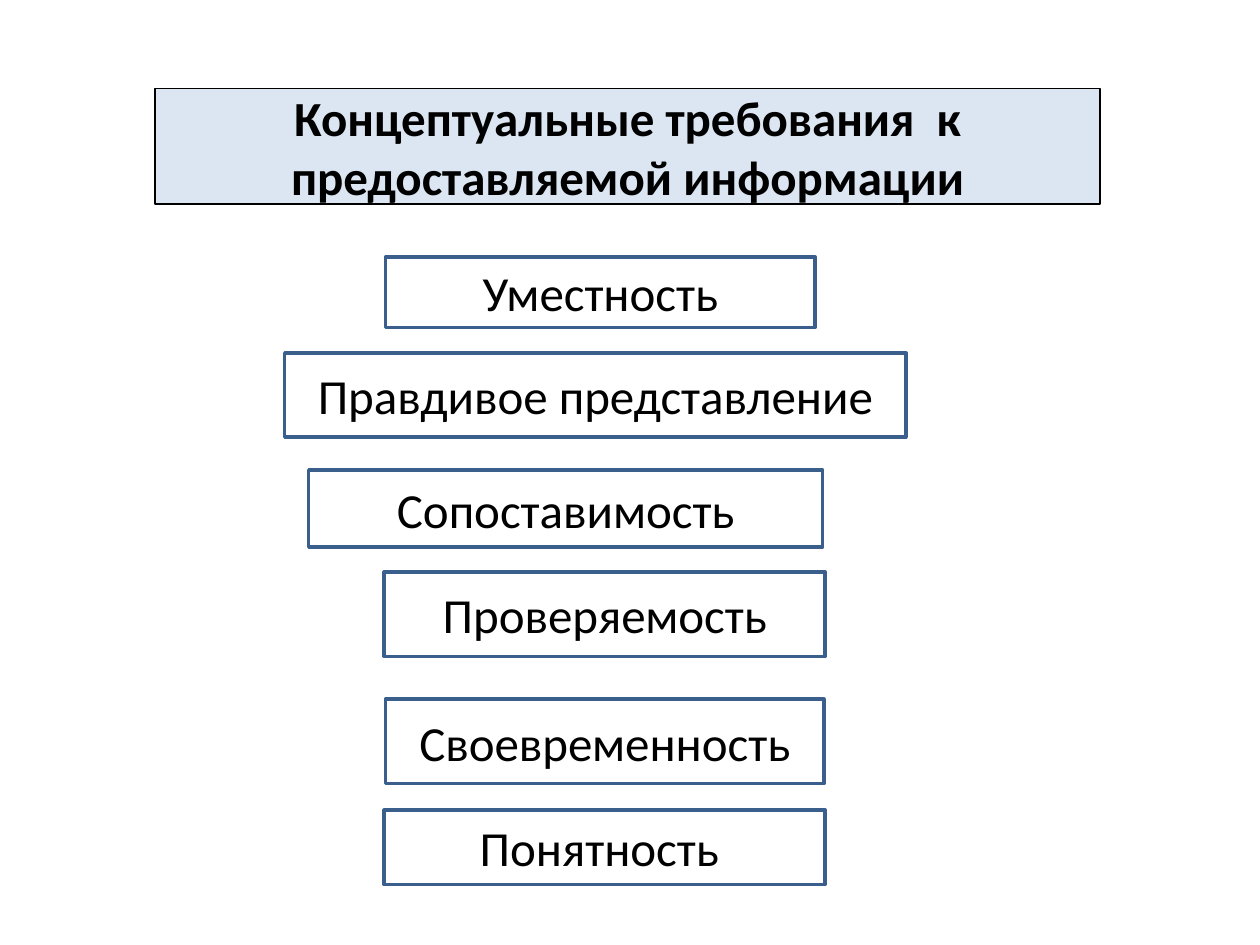
from pptx import Presentation
from pptx.dml.color import RGBColor
from pptx.enum.shapes import MSO_SHAPE as Shape
from pptx.enum.text import MSO_ANCHOR as Anchor, PP_ALIGN as Align
from pptx.util import Inches, Pt

BLACK = RGBColor(0x00, 0x00, 0x00)
WHITE = RGBColor(0xFF, 0xFF, 0xFF)
PALE = RGBColor(0xDC, 0xE6, 0xF2)
BLUE = RGBColor(0x3A, 0x5F, 0x8C)

# Content: text, box (left, top, width, height) in inches, and fill
TITLE = ("Концептуальные требования  к предоставляемой информации",
         (1.23, 0.7, 7.5, 0.92), PALE)
NEEDS = [
    ("Уместность", (3.06, 2.04, 3.41, 0.56), WHITE),
    ("Правдивое представление", (2.26, 2.8, 4.93, 0.67), WHITE),
    ("Сопоставимость", (2.45, 3.73, 4.08, 0.61), WHITE),
    ("Проверяемость", (3.05, 4.54, 3.5, 0.67), None),
    ("Своевременность", (3.06, 5.55, 3.48, 0.67), None),
    ("Понятность ", (3.05, 6.43, 3.5, 0.59), None),
]


def add_box(slide, text, place, fill, line=BLUE, width=2, bold=False):
    box = slide.shapes.add_shape(Shape.RECTANGLE, *map(Inches, place))
    box.shadow.inherit = False
    if fill is None:
        box.fill.background()
    else:
        box.fill.solid()
        box.fill.fore_color.rgb = fill
    box.line.color.rgb = line
    box.line.width = Pt(width)

    frame = box.text_frame
    frame.text = text
    frame.word_wrap = True
    frame.vertical_anchor = Anchor.MIDDLE
    par = frame.paragraphs[0]
    par.alignment = Align.CENTER
    font = par.runs[0].font
    font.name = "Calibri"
    font.size = Pt(28)
    font.bold = bold
    font.color.rgb = BLACK


def main():
    deck = Presentation()
    deck.slide_width, deck.slide_height = Inches(10), Inches(7.5)
    slide = deck.slides.add_slide(deck.slide_layouts[6])

    # Heading
    add_box(slide, *TITLE, line=BLACK, width=0.75, bold=True)

    # Requirements, top to bottom
    for need in NEEDS:
        add_box(slide, *need)

    deck.save("out.pptx")


if __name__ == "__main__":
    main()
